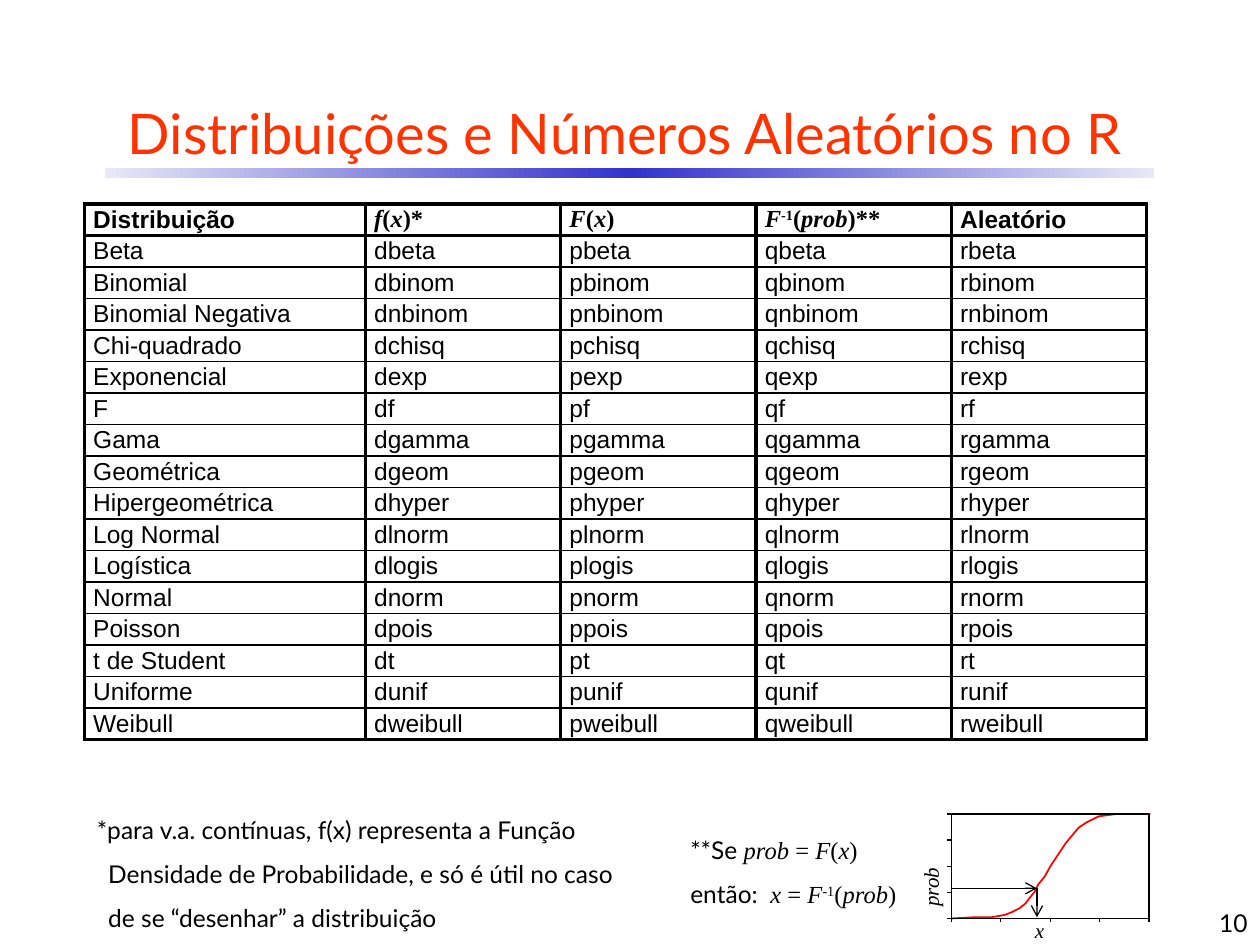
from copy import deepcopy

from lxml.etree import SubElement
from pptx import Presentation
from pptx.dml.color import RGBColor
from pptx.enum.shapes import MSO_CONNECTOR, MSO_SHAPE
from pptx.enum.text import MSO_ANCHOR, PP_ALIGN
from pptx.oxml.ns import qn
from pptx.util import Inches, Pt

BLACK = RGBColor(0x00, 0x00, 0x00)
RED = RGBColor(0xFF, 0x00, 0x00)
ORANGE = RGBColor(0xFF, 0x33, 0x00)
BLUE = RGBColor(0x33, 0x33, 0xCC)
PALE_BLUE = RGBColor(0xE8, 0xE8, 0xF6)
LATO, ARIAL, TIMES = "Lato", "Arial", "Times New Roman"

# Runs are (text, font, marks): i = italic, s = superscript
TITLE = [("Distribuições e Números Aleatórios no R", LATO, "")]
PAGE = [("10", LATO, "")]
F_OF_X = [("F", TIMES, "i"), ("(", TIMES, ""), ("x", TIMES, "i")]
F_INVERSE = [("F", TIMES, "i"), ("-1", TIMES, "s"), ("(", TIMES, ""), ("prob", TIMES, "i")]
HEADERS = [
    [("Distribuição", ARIAL, "")],
    [("f", TIMES, "i"), ("(", TIMES, ""), ("x", TIMES, "i"), (")*", TIMES, "")],
    F_OF_X + [(")", TIMES, "")],
    F_INVERSE + [(")**", TIMES, "")],
    [("Aleatório", ARIAL, "")],
]
PREFIXES = "dpqr"
DISTRIBUTIONS = [
    ("Beta", "beta"), ("Binomial", "binom"), ("Binomial Negativa", "nbinom"),
    ("Chi-quadrado", "chisq"), ("Exponencial", "exp"), ("F", "f"),
    ("Gama", "gamma"), ("Geométrica", "geom"), ("Hipergeométrica", "hyper"),
    ("Log Normal", "lnorm"), ("Logística", "logis"), ("Normal", "norm"),
    ("Poisson", "pois"), ("t de Student", "t"), ("Uniforme", "unif"),
    ("Weibull", "weibull"),
]
DENSITY_NOTE = [("*para v.a. contínuas, f(x) representa a Função Densidade de "
                 "Probabilidade, e só é útil no caso de se “desenhar” a distribuição", LATO, "")]
INVERSE_NOTE = (
    [("**Se ", LATO, ""), ("prob", TIMES, "i"), (" = ", TIMES, "")] + F_OF_X
    + [(") ", TIMES, ""), ("então:  ", LATO, ""), ("x", TIMES, "i"), (" = ", TIMES, "")]
    + F_INVERSE + [(")", TIMES, "")]
)
CURVE = [
    (7.55, 7.29), (7.74, 7.28), (7.87, 7.28), (7.93, 7.27), (7.98, 7.26), (8.03, 7.24),
    (8.09, 7.21), (8.14, 7.17), (8.17, 7.13), (8.21, 7.08), (8.24, 7.02), (8.29, 6.96),
    (8.34, 6.87), (8.4, 6.78), (8.46, 6.69), (8.51, 6.63), (8.56, 6.57), (8.62, 6.53),
    (8.66, 6.51), (8.72, 6.48), (8.79, 6.47), (8.87, 6.46), (9.13, 6.46),
]
PLOT_LEFT, PLOT_TOP, PLOT_WIDTH, PLOT_HEIGHT = 7.55, 6.46, 1.57, 0.83
PLOT_BOTTOM = PLOT_TOP + PLOT_HEIGHT
TICK, INTERVALS = 0.03, 4
X_MARK, PROB_MARK = 8.23, 7.05
COLUMN_WIDTHS = [2.23, 1.55, 1.55, 1.55, 1.55]
ROW_HEIGHT = 0.25


def add_runs(paragraph, runs, size, color=BLACK, bold=False):
    for text, font, marks in runs:
        run = paragraph.add_run()
        run.text = text
        run.font.name = font
        run.font.size = Pt(size)
        run.font.color.rgb = color
        run.font.bold = bold
        run.font.italic = "i" in marks
        if "s" in marks:
            run.font._element.set("baseline", "30000")


def add_text(shapes, box, runs, size, color=BLACK, align=PP_ALIGN.LEFT,
             anchor=MSO_ANCHOR.TOP, spacing=1.0, wrap=True):
    label = shapes.add_textbox(*map(Inches, box))
    frame = label.text_frame
    frame.word_wrap = wrap
    frame.vertical_anchor = anchor
    paragraph = frame.paragraphs[0]
    paragraph.alignment = align
    paragraph.line_spacing = spacing
    add_runs(paragraph, runs, size, color)
    return label


def add_line(shapes, start, end, arrow=False):
    line = shapes.add_connector(MSO_CONNECTOR.STRAIGHT, *map(Inches, start + end))
    line.line.color.rgb = BLACK
    line.line.width = Pt(0.75)
    if arrow:
        SubElement(line.line._get_or_add_ln(), qn("a:tailEnd"), type="arrow")
    SubElement(line._element.spPr, qn("a:effectLst"))


def set_borders(cell, top, bottom):
    properties = cell._tc.get_or_add_tcPr()
    for side, width in (("L", 2.25), ("R", 2.25), ("T", top), ("B", bottom)):
        border = SubElement(properties, qn(f"a:ln{side}"), w=str(Pt(width)))
        fill = SubElement(border, qn("a:solidFill"))
        SubElement(fill, qn("a:srgbClr"), val=str(BLACK))


def add_title_bar(shapes):
    bar = shapes.add_shape(MSO_SHAPE.RECTANGLE, *map(Inches, (0.83, 1.33, 8.33, 0.08)))
    bar.shadow.inherit = False
    bar.line.fill.background()
    bar.fill.gradient()
    bar.fill.gradient_angle = 0
    first, last = bar.fill.gradient_stops
    first.color.rgb = last.color.rgb = PALE_BLUE
    middle = deepcopy(first._gs)
    first._gs.addnext(middle)
    bar.fill.gradient_stops[1].color.rgb = BLUE
    for stop, position in zip(bar.fill.gradient_stops, (0, 0.5, 1)):
        stop.position = position


def add_distribution_table(shapes):
    rows = HEADERS, *(
        [[(text, ARIAL, "")] for text in [name] + [prefix + stem for prefix in PREFIXES]]
        for name, stem in DISTRIBUTIONS
    )
    table = shapes.add_table(
        len(rows), len(HEADERS), Inches(0.67), Inches(1.62),
        Inches(sum(COLUMN_WIDTHS)), Inches(ROW_HEIGHT * len(rows))).table
    table.first_row = table.horz_banding = False
    for column, width in zip(table.columns, COLUMN_WIDTHS):
        column.width = Inches(width)
    for r, row in enumerate(rows):
        top = 2.25 if r <= 1 else 1
        bottom = 2.25 if r in (0, len(rows) - 1) else 1
        for c, runs in enumerate(row):
            cell = table.cell(r, c)
            cell.margin_left = cell.margin_right = Inches(0.07)
            cell.margin_top = cell.margin_bottom = 0
            set_borders(cell, top, bottom)
            cell.fill.background()
            paragraph = cell.text_frame.paragraphs[0]
            paragraph.line_spacing = 1.07
            add_runs(paragraph, runs, 14, bold=r == 0)


def add_cumulative_plot(shapes):
    points = [(Inches(x), Inches(y)) for x, y in CURVE]
    builder = shapes.build_freeform(*points[0])
    builder.add_line_segments(points[1:], close=False)
    curve = builder.convert_to_shape()
    frame = shapes.add_shape(MSO_SHAPE.RECTANGLE, *map(
        Inches, (PLOT_LEFT, PLOT_TOP, PLOT_WIDTH, PLOT_HEIGHT)))
    for outline, color, width in ((curve, RED, 1), (frame, BLACK, 0.75)):
        outline.shadow.inherit = False
        outline.fill.background()
        outline.line.color.rgb = color
        outline.line.width = Pt(width)
    for i in range(INTERVALS + 1):
        x = PLOT_LEFT + PLOT_WIDTH * i / INTERVALS
        y = PLOT_TOP + PLOT_HEIGHT * i / INTERVALS
        add_line(shapes, (x, PLOT_BOTTOM), (x, PLOT_BOTTOM + TICK))
        add_line(shapes, (PLOT_LEFT, y), (PLOT_LEFT - TICK, y))
    prob_label = add_text(shapes, (7.13, 6.89, 0.51, 0.3), [("prob", TIMES, "i")], 12,
                          align=PP_ALIGN.CENTER, wrap=False)
    prob_label.rotation = 270
    add_text(shapes, (8.11, 7.23, 0.28, 0.3), [("x", TIMES, "i")], 12,
             align=PP_ALIGN.CENTER, wrap=False)
    add_line(shapes, (PLOT_LEFT, PROB_MARK), (X_MARK, PROB_MARK), arrow=True)
    add_line(shapes, (X_MARK, PROB_MARK), (X_MARK, PLOT_BOTTOM - 0.01), arrow=True)


def main():
    deck = Presentation()
    deck.slide_width, deck.slide_height = Inches(10), Inches(7.5)
    shapes = deck.slides.add_slide(deck.slide_layouts[6]).shapes
    add_title_bar(shapes)
    add_text(shapes, (0.2, 0.67, 9.52, 0.75), TITLE, 32, ORANGE,
             PP_ALIGN.CENTER, MSO_ANCHOR.MIDDLE)
    add_text(shapes, (7.92, 7.14, 2.08, 0.35), PAGE, 14,
             align=PP_ALIGN.RIGHT, anchor=MSO_ANCHOR.BOTTOM)
    add_distribution_table(shapes)
    add_text(shapes, (5.38, 6.46, 1.91, 0.77), INVERSE_NOTE, 14, spacing=1.5)
    add_cumulative_plot(shapes.add_group_shape().shapes)
    density = add_text(shapes, (0.67, 6.3, 4.42, 1.12), DENSITY_NOTE, 14, spacing=1.5)
    indent = density.text_frame.paragraphs[0]._p.get_or_add_pPr()
    indent.set("marL", str(Inches(0.09)))
    indent.set("indent", str(Inches(-0.09)))
    deck.save("out.pptx")


if __name__ == "__main__":
    main()
